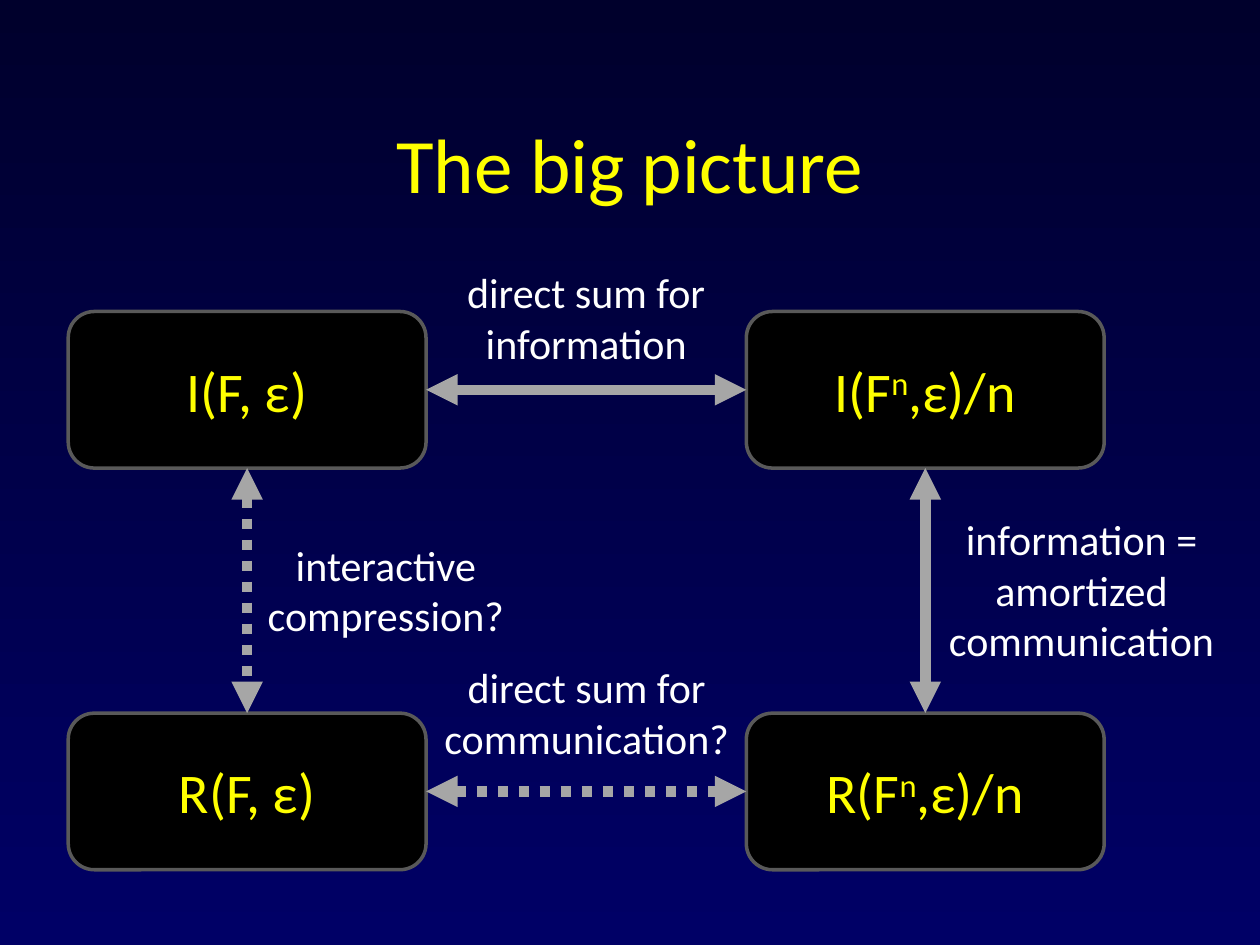
"""Builds the slide that relates information cost and communication cost."""
from lxml import etree
from pptx import Presentation
from pptx import util as u
from pptx.dml.color import RGBColor
from pptx.enum import dml, shapes, text
from pptx.oxml import ns

COLORS = {
    "top": "00002C", "bottom": "000066", "accent": "FFFF00", "label": "FFFFFF",
    "box": "000000", "border": "595959", "arrow": "A6A6A6",
}
FONT = "Calibri"
BOX_WIDTH, BOX_HEIGHT = 204.5, 89.5
LEFT, RIGHT = 39, 426.5
UPPER, LOWER = 178, 407.5
TOP_SIDE, LEFT_SIDE, BOTTOM_SIDE, RIGHT_SIDE = range(4)


class Painter:
    """Holds the style and the current slide."""

    def __init__(self, deck):
        self.page = deck.slides.add_slide(deck.slide_layouts[5])

    def color(self, name):
        return RGBColor.from_string(COLORS[name])

    def background(self):
        fill = self.page.background.fill
        fill.gradient()
        fill.gradient_angle = 270
        for stop, name in zip(fill.gradient_stops, ("top", "bottom")):
            stop.color.rgb = self.color(name)

    def format_span(self, span, size, color):
        span.font.name = FONT
        span.font.size = u.Pt(size)
        span.font.color.rgb = self.color(color)

    def set_text(self, box, parts, size, color, anchor):
        frame = box.text_frame
        frame.word_wrap = True
        frame.vertical_anchor = anchor
        para = frame.paragraphs[0]
        para.alignment = text.PP_ALIGN.CENTER
        for index, part in enumerate(parts):
            span = para.add_run()
            span.text = part
            self.format_span(span, size, color)
            if index % 2:
                span.font._element.set("baseline", "30000")

    def title(self, words, left, top, width, height):
        box = self.page.shapes.title
        box.left, box.top = u.Pt(left), u.Pt(top)
        box.width, box.height = u.Pt(width), u.Pt(height)
        self.set_text(box, [words], 44, "accent", text.MSO_ANCHOR.MIDDLE)

    def node(self, parts, left, top):
        box = self.page.shapes.add_shape(
            shapes.MSO_SHAPE.ROUNDED_RECTANGLE,
            u.Pt(left), u.Pt(top), u.Pt(BOX_WIDTH), u.Pt(BOX_HEIGHT))
        box.shadow.inherit = False
        box.fill.solid()
        box.fill.fore_color.rgb = self.color("box")
        box.line.color.rgb = self.color("border")
        box.line.width = u.Pt(2)
        self.set_text(box, parts, 32, "accent", text.MSO_ANCHOR.MIDDLE)
        return box

    def arrow(self, start, start_side, end, end_side, dotted):
        arrow = self.page.shapes.add_connector(
            shapes.MSO_CONNECTOR.STRAIGHT, 0, 0, 0, 0)
        arrow.begin_connect(start, start_side)
        arrow.end_connect(end, end_side)
        arrow.line.color.rgb = self.color("arrow")
        arrow.line.width = u.Pt(6)
        if dotted:
            arrow.line.dash_style = dml.MSO_LINE.ROUND_DOT
            dash = arrow.line._ln.find(ns.qn("a:prstDash"))
            dash.set("val", "sysDot")
        for tag in ("a:headEnd", "a:tailEnd"):
            etree.SubElement(arrow.line._ln, ns.qn(tag), type="triangle")
        etree.SubElement(arrow._element.spPr, ns.qn("a:effectLst"))

    def label(self, words, left, top, width, height):
        box = self.page.shapes.add_textbox(
            u.Pt(left), u.Pt(top), u.Pt(width), u.Pt(height))
        self.set_text(box, [words], 24, "label", text.MSO_ANCHOR.TOP)


def main():
    deck = Presentation()
    deck.slide_width, deck.slide_height = u.Pt(720), u.Pt(540)
    painter = Painter(deck)
    painter.background()
    painter.title("The big picture", 54, 48, 612, 90)

    single_cost = painter.node(["R(F, ε)"], LEFT, LOWER)
    amortized_cost = painter.node(["R(F", "n", ",ε)/n"], RIGHT, LOWER)
    single_info = painter.node(["I(F, ε)"], LEFT, UPPER)
    amortized_info = painter.node(["I(F", "n", ",ε)/n"], RIGHT, UPPER)

    painter.arrow(single_info, RIGHT_SIDE, amortized_info, LEFT_SIDE, False)
    painter.arrow(amortized_info, BOTTOM_SIDE, amortized_cost, TOP_SIDE, False)
    painter.arrow(single_cost, RIGHT_SIDE, amortized_cost, LEFT_SIDE, True)
    painter.arrow(single_info, BOTTOM_SIDE, single_cost, TOP_SIDE, True)

    painter.label("direct sum for information", 254.5, 149, 161, 65.5)
    painter.label("information = amortized communication", 529, 290, 178, 94.5)
    painter.label("direct sum for communication?", 239.5, 374.5, 191.5, 65.5)
    painter.label("interactive compression?", 131.5, 304.5, 178, 65.5)
    deck.save("out.pptx")


if __name__ == "__main__":
    main()
